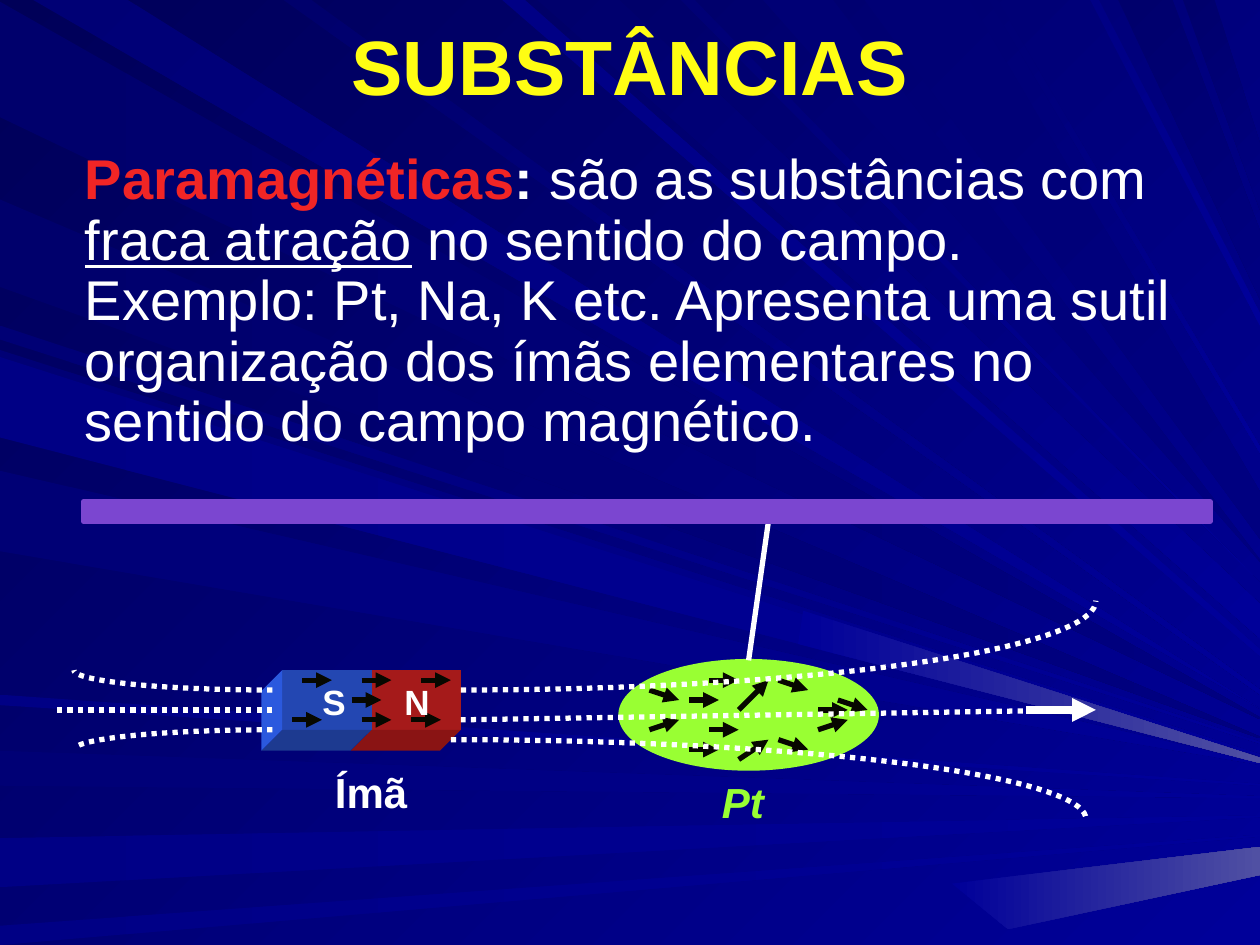
from math import cos, radians, sin

from lxml.etree import SubElement
from pptx import Presentation
from pptx.dml.color import RGBColor
from pptx.enum.dml import MSO_LINE
from pptx.enum.shapes import MSO_CONNECTOR, MSO_SHAPE
from pptx.enum.text import MSO_ANCHOR, PP_ALIGN
from pptx.oxml.ns import qn
from pptx.util import Pt

COLORS = {
    "night": "000058", "deep": "00006C", "dark": "000075", "dusk": "000085",
    "navy": "000080", "blue": "000099", "glow": "5050A3",
    "yellow": "FFFD13", "red": "F12525", "white": "FFFFFF", "purple": "7B46D0",
    "green": "99FF33", "arrow": "070800",
    "south": "2347B2", "south side": "2B59DE", "south base": "1D3A90",
    "north": "A51A1A", "north base": "8A1414",
}
TITLE = "SUBSTÂNCIAS"
BODY = [
    ("Paramagnéticas", "red", True, False),
    (": ", "white", True, False),
    ("são as substâncias com ", "white", False, False),
    ("fraca atração", "white", False, True),
    (" no sentido do campo. Exemplo: Pt, Na, K etc. Apresenta uma sutil organização "
     "dos ímãs elementares no sentido do campo magnético.", "white", False, False),
]

WIDTH, HEIGHT = 720, 540
LEFT_RAYS = [
    (1, 67, 410, "deep", "navy"), (429, 449, 455, "dark", "blue"),
    (479, 507, 466, "dusk", "blue"), (529, 540, 477, "dusk", "blue"),
    (186, 194, 424, "dark", "blue"), (114, 164, 421, "deep", "navy"),
    (200, 246, 431, "dark", "blue"), (269, 315, 436, "dark", "blue"),
    (397, 403, 448, "dusk", "blue"), (204, 250, 435, "dusk", "blue"),
]
TOP_RAYS = [
    (19, 73, 405, 405, "dark", "blue"), (287, 300, 371, 375, "dusk", "blue"),
    (307, 354, 345, 365, "deep", "blue"), (162, 178, 394, 397, "deep", "blue"),
    (389, 397, 333, 333, "dark", "blue"), (436, 476, 320, 321, "dark", "navy"),
    (494, 554, 281, 308, "dark", "navy"), (565, 570, 255, 259, "dark", "blue"),
    (623, 628, 179, 186, "dusk", "blue"), (639, 670, 132, 171, "deep", "navy"),
    (676, 694, 82, 120, "deep", "navy"),
]
GLOWS = [
    [(459, 349), (WIDTH, 433), (WIDTH, 436), (456, 368)],
    [(544, 505), (WIDTH, 484), (WIDTH, 500), (576, 531)],
]

ORIGIN_X, ORIGIN_Y, STEP = 161.3, 383, 5.67
POLE_WIDTH, POLE_HEIGHT, DEPTH = 9, 6, 2.1
POLES = [("north", POLE_WIDTH), ("south", 0)]
PLATINUM_ARROWS = {
    (3, 0): [(43, 1), (54, 4), (41, 3), (43, 6), (41, 8)],
    (3, 1): [(50, 7), (50, 1), (56, 3), (37, 2)],
    (3, -1): [(54, 6), (37, 6)],
    (3, -2): [(46, 9)],
    (3, -3): [(46, 4)],
}
MAGNET_ARROWS = {(3, 0): [(2, 1), (8, 1), (14, 1), (7, 3), (1, 5), (8, 5), (13, 5)]}
FIELD_ARCS = [
    (18, -7, 64, 9, 90), (17, 15, 64, -8, 90), (-1, 0, -20, 2, 90), (-1, 8, -20, -2, 78),
]
FIELD_LINES = [(-1, 4, -23, 4), (81, 4, 18, 5)]
LABELS = [
    ("Ímã", 184.3, 434.2, 24, "white", False),
    ("S", 177.1, 385.9, 20, "white", False),
    ("N", 224, 385.9, 20, "white", False),
    ("Pt", 405.4, 440, 24, "green", True),
]


def rgb(name):
    return RGBColor.from_string(COLORS[name])


def grid_x(column):
    return ORIGIN_X + column * STEP


def grid_y(row):
    return ORIGIN_Y + row * STEP


def on_grid(points):
    return [(grid_x(x), grid_y(y)) for x, y in points]


def paint(fill, start, end, angle=0):
    if start == end:
        fill.solid()
        fill.fore_color.rgb = rgb(start)
        return
    fill.gradient()
    fill.gradient_angle = (360 - angle) % 360
    for stop, color in zip(fill.gradient_stops, (start, end)):
        stop.color.rgb = rgb(color)


def add_outline(shapes, points, close=True):
    corners = [(Pt(x), Pt(y)) for x, y in points]
    builder = shapes.build_freeform(*corners[0])
    builder.add_line_segments(corners[1:], close=close)
    shape = builder.convert_to_shape()
    shape.shadow.inherit = False
    return shape


def add_face(shapes, points, start, end, angle=0):
    shape = add_outline(shapes, points)
    paint(shape.fill, start, end, angle)
    shape.line.fill.background()


def add_rays(shapes):
    for top, bottom, target, start, end in LEFT_RAYS:
        points = [(0, top), (WIDTH, target), (WIDTH, target + 1), (0, bottom)]
        add_face(shapes, points, start, end)
    for left, right, high, low, start, end in TOP_RAYS:
        points = [(left, 0), (WIDTH, low), (WIDTH, high), (right, 0)]
        add_face(shapes, points, start, end, 45)
    for points in GLOWS:
        add_face(shapes, points, "blue", "glow")


def add_magnet(shapes):
    for pole, left in POLES:
        right = left + POLE_WIDTH
        front = [(left, 0), (right, 0), (right, POLE_HEIGHT), (left, POLE_HEIGHT)]
        low = POLE_HEIGHT + DEPTH
        base = [front[3], front[2], (right - DEPTH, low), (left - DEPTH, low)]
        add_face(shapes, on_grid(front), pole, pole)
        add_face(shapes, on_grid(base), f"{pole} base", f"{pole} base")
    side = [front[0], front[3], base[3], (-DEPTH, DEPTH)]
    add_face(shapes, on_grid(side), "south side", "south side")


def style_line(line, color, width, dotted=False):
    line.color.rgb = rgb(color)
    line.width = Pt(width)
    if dotted:
        line.dash_style = MSO_LINE.ROUND_DOT


def add_line(shapes, ends, color, width=3, dotted=False, arrow=False):
    (x1, y1), (x2, y2) = on_grid([ends[:2], ends[2:]])
    connector = shapes.add_connector(MSO_CONNECTOR.STRAIGHT, Pt(x1), Pt(y1), Pt(x2), Pt(y2))
    style_line(connector.line, color, width, dotted)
    if arrow:
        SubElement(connector.line._get_or_add_ln(), qn("a:tailEnd"), type="triangle")
    SubElement(connector._element.spPr, qn("a:effectLst"))
    return connector


def add_arrows(shapes, groups):
    for (dx, dy), starts in groups.items():
        for x, y in starts:
            add_line(shapes, (x, y, x + dx, y + dy), "arrow", arrow=True)


def add_block(shapes, kind, column, row, columns, rows, color, width):
    shape = shapes.add_shape(
        kind, Pt(grid_x(column)), Pt(grid_y(row)), Pt(columns * STEP), Pt(rows * STEP))
    shape.shadow.inherit = False
    paint(shape.fill, color, color)
    style_line(shape.line, color, width)
    return shape


def add_text(shapes, runs, left, top, width, height, size, wrap=True, anchor=MSO_ANCHOR.MIDDLE):
    frame = shapes.add_textbox(Pt(left), Pt(top), Pt(width), Pt(height)).text_frame
    frame.word_wrap = wrap
    frame.vertical_anchor = anchor
    paragraph = frame.paragraphs[0]
    for text, color, bold, underline in runs:
        run = paragraph.add_run()
        run.text = text
        font = run.font
        font.name, font.size = "Arial", Pt(size)
        font.bold, font.underline = bold, underline
        font.color.rgb = rgb(color)
    return paragraph


def main():
    presentation = Presentation()
    presentation.slide_width, presentation.slide_height = Pt(WIDTH), Pt(HEIGHT)
    slide = presentation.slides.add_slide(presentation.slide_layouts[6])
    shapes = slide.shapes
    paint(slide.background.fill, "night", "blue", 45)
    add_rays(shapes)

    title = add_text(shapes, [(TITLE, "yellow", True, False)], 36, -8, 648, 90, 44)
    title.alignment = PP_ALIGN.CENTER
    body = add_text(shapes, BODY, 14.4, 82.8, 680.4, 181.4, 32, anchor=MSO_ANCHOR.TOP)
    body.line_spacing = 0.9
    body._p.get_or_add_pPr().set("marL", str(Pt(27)))

    platinum = add_block(shapes, MSO_SHAPE.OVAL, 34, -1, 26, 11, "green", 1.5)
    string = add_line(shapes, (47, -1, 49, -15), "white")
    string.begin_connect(platinum, 0)
    add_block(shapes, MSO_SHAPE.RECTANGLE, -20, -17, 113.5, 2, "purple", 3)
    add_arrows(shapes, PLATINUM_ARROWS)
    add_magnet(shapes)
    add_arrows(shapes, MAGNET_ARROWS)

    for x, y, radius_x, radius_y, sweep in FIELD_ARCS:
        angles = [radians(sweep * step / 40) for step in range(41)]
        points = [(x + radius_x * sin(a), y + radius_y * cos(a)) for a in angles]
        arc = add_outline(shapes, on_grid(points), close=False)
        arc.fill.background()
        style_line(arc.line, "white", 3, dotted=True)
    for ends in FIELD_LINES:
        add_line(shapes, ends, "white", dotted=True)
    add_line(shapes, (75, 4, 82, 4), "white", 4.5, arrow=True)

    for text, left, top, size, color, italic in LABELS:
        label = add_text(shapes, [(text, color, True, False)],
                         left, top, size * 2.6, size * 1.5, size, wrap=False)
        label.runs[0].font.italic = italic
    presentation.save("out.pptx")


if __name__ == "__main__":
    main()
